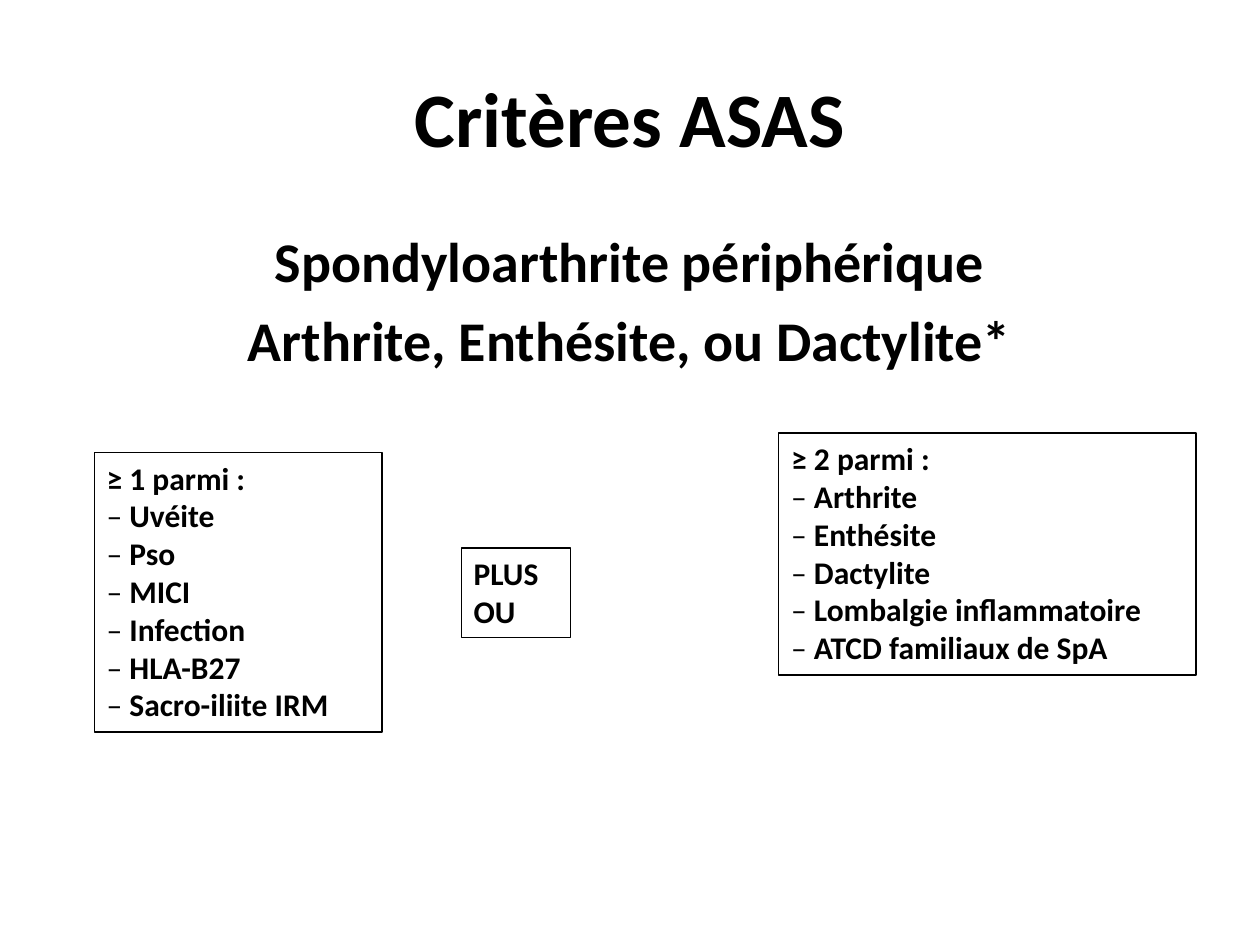
from pptx import Presentation
from pptx.dml.color import RGBColor
from pptx.enum.shapes import MSO_SHAPE
from pptx.enum.text import MSO_ANCHOR as Anchor, MSO_AUTO_SIZE as Fit, PP_ALIGN as Align
from pptx.util import Cm, Pt

BLACK = RGBColor(0, 0, 0)
FONT = "Calibri"
DASH = "– "

# Content: places are left, top, width, height in cm
TITLE = ["Critères ASAS"]
INTRO = ["Spondyloarthrite périphérique", "Arthrite, Enthésite, ou Dactylite*"]
BOXES = [
    ((1.9, 9.12, 5.8, 5.64), ["≥ 1 parmi :"],
     ["Uvéite", "Pso", "MICI", "Infection", "HLA-B27", "Sacro-iliite IRM"]),
    ((9.3, 11.05, 2.2, 1.8), ["PLUS", "OU"], []),
    ((15.7, 8.73, 8.41, 4.88), ["≥ 2 parmi :"],
     ["Arthrite", "Enthésite", "Dactylite", "Lombalgie inflammatoire",
      "ATCD familiaux de SpA"]),
]


def write(frame, lines, size, align, gap=0):
    """Fill a frame; a leading dash stays in regular weight."""
    frame.word_wrap = True
    for i, line in enumerate(lines):
        para = frame.paragraphs[0] if i == 0 else frame.add_paragraph()
        para.alignment = align
        para.space_before = Pt(gap)
        parts = [DASH, line[len(DASH):]] if line.startswith(DASH) else [line]
        for part in parts:
            run = para.add_run()
            run.text = part
            font = run.font
            font.name, font.size, font.bold = FONT, Pt(size), part != DASH
            font.color.rgb = BLACK


deck = Presentation()
deck.slide_width, deck.slide_height = Cm(25.4), Cm(19.05)
shapes = deck.slides.add_slide(deck.slide_layouts[6]).shapes

# Title and introduction
head = shapes.add_textbox(Cm(1.27), Cm(0.76), Cm(22.86), Cm(3.18)).text_frame
head.vertical_anchor = Anchor.MIDDLE
write(head, TITLE, 44, Align.CENTER)
body = shapes.add_textbox(Cm(1.27), Cm(4.45), Cm(22.86), Cm(12.57)).text_frame
write(body, INTRO, 32, Align.CENTER, gap=6.4)

# Criteria boxes
for place, top, items in BOXES:
    box = shapes.add_shape(MSO_SHAPE.RECTANGLE, *map(Cm, place))
    box.shadow.inherit = False
    box.fill.background()
    box.line.color.rgb = BLACK
    box.line.width = Pt(0.75)
    frame = box.text_frame
    frame.vertical_anchor = Anchor.TOP
    write(frame, top + [DASH + item for item in items], 18, Align.LEFT)
    frame.auto_size = Fit.SHAPE_TO_FIT_TEXT

deck.save("out.pptx")
